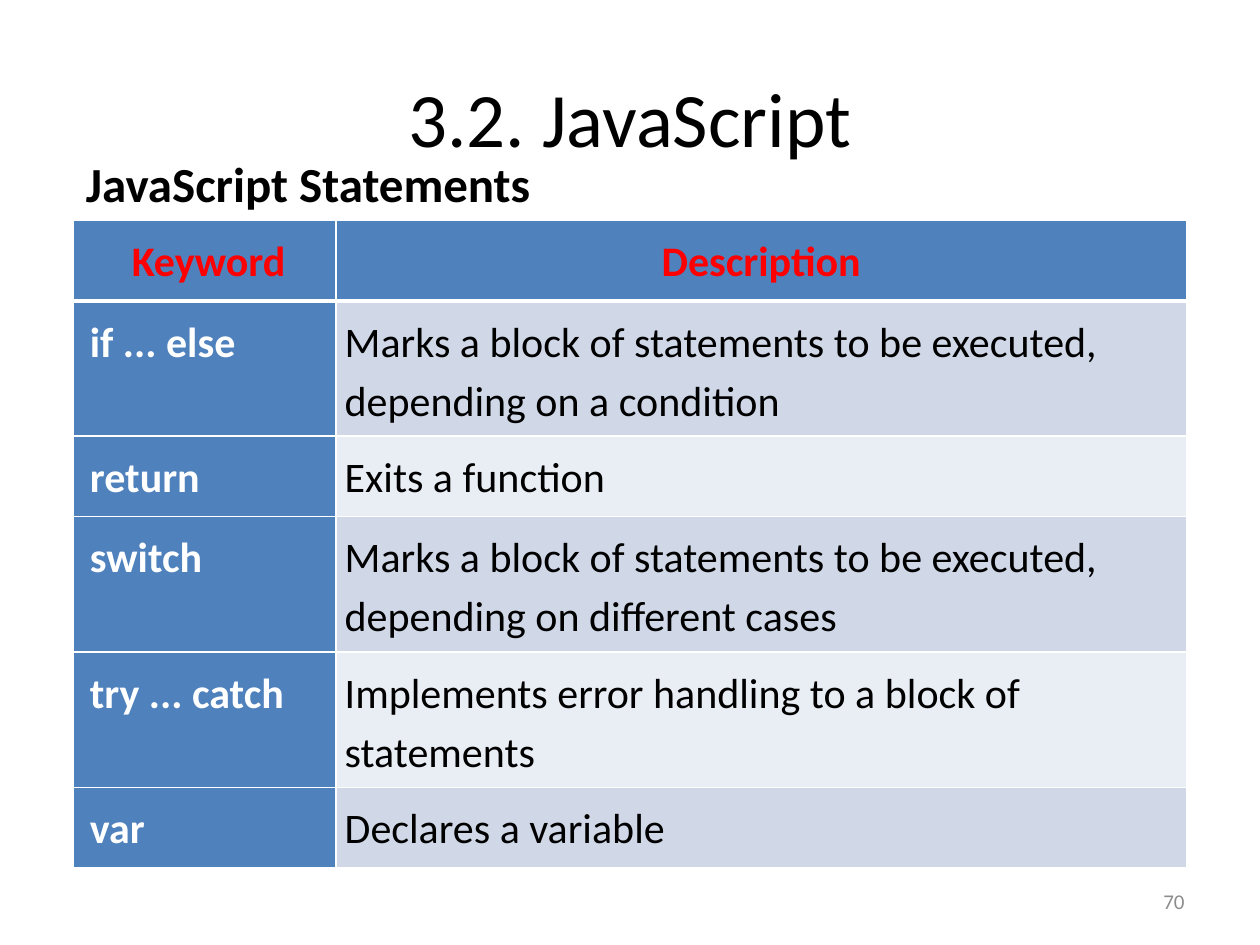
from lxml.etree import SubElement
from pptx import Presentation
from pptx.dml.color import RGBColor
from pptx.enum.text import MSO_ANCHOR, PP_ALIGN
from pptx.oxml.ns import qn
from pptx.util import Pt

FONT = "Calibri"
BLACK, WHITE, RED, GREY = "000000", "FFFFFF", "FF0000", "8C8C8C"
BLUE, BANDS = "4F81BD", ("D0D8E8", "E9EDF4")

HEADINGS = ("Keyword", "Description")
STATEMENTS = [
    ("if ... else", "Marks a block of statements to be executed, depending on a condition"),
    ("return", "Exits a function"),
    ("switch", "Marks a block of statements to be executed, depending on different cases"),
    ("try ... catch", "Implements error handling to a block of statements"),
    ("var", "Declares a variable"),
]
LABELS = [
    ("3.2. JavaScript", (36, 21.6, 648, 90), 44, BLACK, False, PP_ALIGN.CENTER, MSO_ANCHOR.MIDDLE),
    ("70", (516, 500.4, 168, 28.8), 12, GREY, False, PP_ALIGN.RIGHT, MSO_ANCHOR.MIDDLE),
    ("JavaScript Statements", (42, 84, 288, 41.2), 28, BLACK, True, PP_ALIGN.LEFT, MSO_ANCHOR.TOP),
]
TABLE_LEFT, TABLE_TOP = 42, 126
COLUMN_WIDTHS = (150, 486)
SHORT_ROW, TALL_ROW = 46, 72
LINE_CAPACITY = 45


def color(value):
    return RGBColor.from_string(value)


def write(frame, text, size, ink, bold, align):
    frame.text = text
    paragraph = frame.paragraphs[0]
    paragraph.alignment = align
    font = paragraph.runs[0].font
    font.name, font.size, font.bold = FONT, Pt(size), bold
    font.color.rgb = color(ink)
    return paragraph


def add_border(cell, side, width):
    line = SubElement(cell._tc.get_or_add_tcPr(), qn(f"a:ln{side}"), w=str(Pt(width)))
    SubElement(SubElement(line, qn("a:solidFill")), qn("a:srgbClr"), val=WHITE)


def fill_cell(cell, text, row, column):
    header = row == 0
    keyed = column == 0
    cell.margin_left = Pt(9.4 if keyed else 5)
    cell.margin_top = cell.margin_right = cell.margin_bottom = Pt(5)
    ink = RED if header else WHITE if keyed else BLACK
    align = PP_ALIGN.CENTER if header else PP_ALIGN.LEFT
    paragraph = write(cell.text_frame, text, 24, ink, header or keyed, align)
    paragraph.line_spacing = 1.15
    for side, width in (("L", 1), ("R", 1), ("T", 3 if row == 1 else 1), ("B", 3 if header else 1)):
        add_border(cell, side, width)
    cell.fill.solid()
    cell.fill.fore_color.rgb = color(BLUE if header or keyed else BANDS[(row - 1) % 2])


def add_label(slide, text, box, size, ink, bold, align, anchor):
    frame = slide.shapes.add_textbox(*map(Pt, box)).text_frame
    frame.word_wrap = True
    frame.vertical_anchor = anchor
    write(frame, text, size, ink, bold, align)


def add_statement_table(slide):
    rows = [HEADINGS, *STATEMENTS]
    heights = [TALL_ROW if len(description) > LINE_CAPACITY else SHORT_ROW for _, description in rows]
    table = slide.shapes.add_table(
        len(rows), len(HEADINGS), Pt(TABLE_LEFT), Pt(TABLE_TOP), Pt(sum(COLUMN_WIDTHS)), Pt(sum(heights))
    ).table
    for column, width in zip(table.columns, COLUMN_WIDTHS):
        column.width = Pt(width)
    for r, (texts, height) in enumerate(zip(rows, heights)):
        table.rows[r].height = Pt(height)
        for c, text in enumerate(texts):
            fill_cell(table.cell(r, c), text, r, c)


def main():
    deck = Presentation()
    deck.slide_width, deck.slide_height = Pt(720), Pt(540)
    slide = deck.slides.add_slide(deck.slide_layouts[6])
    add_statement_table(slide)
    for label in LABELS:
        add_label(slide, *label)
    deck.save("out.pptx")


if __name__ == "__main__":
    main()
